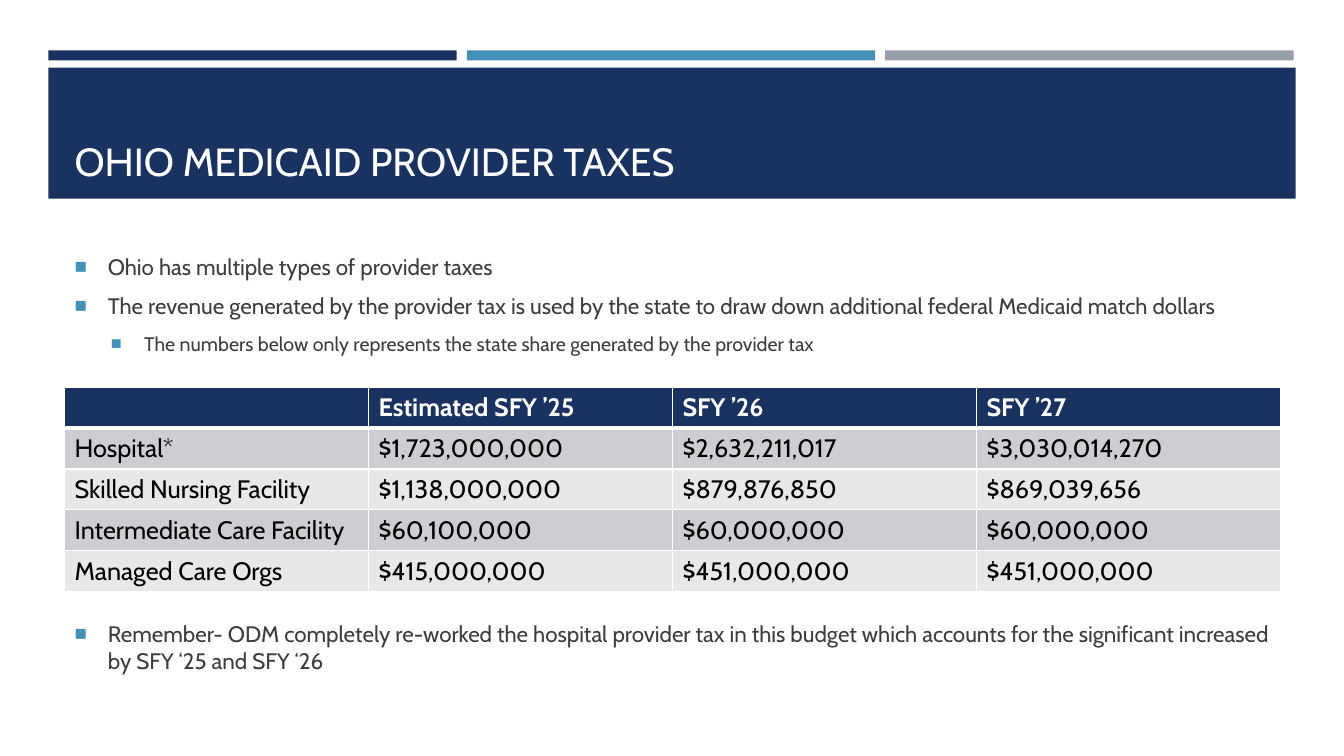
from lxml import etree
from pptx import Presentation
from pptx import util as u
from pptx.dml.color import RGBColor
from pptx.enum import shapes, text
from pptx.oxml import ns

PX = 9144
FONT = "Cabin"
COLORS = {
    "navy": "1A3260",
    "blue": "4590B8",
    "gray": "969FA7",
    "white": "FFFFFF",
    "body": "3D3D3D",
    "black": "000000",
    "band_dark": "CDCED2",
    "band_light": "E8E8EA",
}
TAXES = [
    ["", "Estimated SFY ’25", "SFY ’26", "SFY ’27"],
    ["Hospital*", "$1,723,000,000", "$2,632,211,017", "$3,030,014,270"],
    ["Skilled Nursing Facility", "$1,138,000,000", "$879,876,850", "$869,039,656"],
    ["Intermediate Care Facility", "$60,100,000", "$60,000,000", "$60,000,000"],
    ["Managed Care Orgs", "$415,000,000", "$451,000,000", "$451,000,000"],
]
INTRO = [
    (0, "Ohio has multiple types of provider taxes"),
    (0, "The revenue generated by the provider tax is used by the state to draw down "
        "additional federal Medicaid match dollars"),
    (1, "The numbers below only represents the state share generated by the provider tax"),
]
REMINDER = [
    (0, "Remember- ODM completely re-worked the hospital provider tax in this budget "
        "which accounts for the significant increased by SFY ‘25 and SFY ‘26"),
]


def rgb(name):
    return RGBColor.from_string(COLORS[name])


def apply(target, values):
    for name, value in values.items():
        setattr(target, name, value)


def place(shape, box):
    apply(shape, dict(zip(("left", "top", "width", "height"), (n * PX for n in box))))


def add_span(para, wording, size, color, bold=False):
    span = para.add_run()
    span.text = wording
    apply(span.font, {"name": FONT, "size": u.Pt(size), "bold": bold})
    span.font.color.rgb = rgb(color)


def add_bar(page, box, color):
    bar = page.shapes.add_shape(shapes.MSO_SHAPE.RECTANGLE, *(n * PX for n in box))
    bar.shadow.inherit = False
    bar.fill.solid()
    bar.fill.fore_color.rgb = rgb(color)
    bar.line.fill.background()


def add_header(page, box):
    left, top, width, height = box
    gap = 10
    bar_width = (width - 2 * gap) // 3
    for index, color in enumerate(("navy", "blue", "gray")):
        add_bar(page, (left + index * (bar_width + gap), top, bar_width, 10), color)
    add_bar(page, (left, top + 17, width, height - 17), "navy")


def fill_title(title, box, wording):
    place(title, box)
    apply(title.text_frame, {
        "word_wrap": True,
        "auto_size": text.MSO_AUTO_SIZE.NONE,
        "vertical_anchor": text.MSO_ANCHOR.BOTTOM,
    })
    para = title.text_frame.paragraphs[0]
    para.alignment = text.PP_ALIGN.LEFT
    add_span(para, wording, 28, "white")


def add_bullet(para, level):
    properties = para._p.get_or_add_pPr()
    properties.set("marL", str((33 + 36 * level) * PX))
    properties.set("indent", str(-33 * PX))
    color = etree.SubElement(properties, ns.qn("a:buClr"))
    etree.SubElement(color, ns.qn("a:srgbClr"), val=COLORS["blue"])
    etree.SubElement(properties, ns.qn("a:buSzPct"), val="92000")
    etree.SubElement(properties, ns.qn("a:buChar"), char="■")


def fill_list(body, box, items):
    place(body, box)
    frame = body.text_frame
    apply(frame, {
        "word_wrap": True,
        "auto_size": text.MSO_AUTO_SIZE.NONE,
        "vertical_anchor": text.MSO_ANCHOR.MIDDLE,
    })
    for index, (level, wording) in enumerate(items):
        para = frame.add_paragraph() if index else frame.paragraphs[0]
        size = 16 - 2 * level
        add_bullet(para, level)
        apply(para, {
            "level": level,
            "alignment": text.PP_ALIGN.LEFT,
            "space_before": u.Pt(size * 0.2),
            "space_after": u.Pt(6),
        })
        add_span(para, wording, size, "body")


def add_borders(cell, widths):
    properties = cell._tc.get_or_add_tcPr()
    for side, width in widths.items():
        line = etree.SubElement(properties, ns.qn(f"a:ln{side}"), w=str(u.Pt(width)))
        fill = etree.SubElement(line, ns.qn("a:solidFill"))
        etree.SubElement(fill, ns.qn("a:srgbClr"), val=COLORS["white"])


def add_tax_table(page, box, rows):
    frame = page.shapes.add_table(len(rows), len(rows[0]), *(n * PX for n in box))
    table = frame.table
    for column in table.columns:
        column.width = box[2] * PX // len(rows[0])
    for row_index, values in enumerate(rows):
        table.rows[row_index].height = box[3] * PX // len(rows)
        header = row_index == 0
        band = "navy" if header else ("band_light", "band_dark")[row_index % 2]
        widths = {"L": 1, "R": 1, "T": 3 if row_index == 1 else 1, "B": 3 if header else 1}
        for column_index, wording in enumerate(values):
            cell = table.cell(row_index, column_index)
            add_borders(cell, widths)
            cell.fill.solid()
            cell.fill.fore_color.rgb = rgb(band)
            if wording:
                para = cell.text_frame.paragraphs[0]
                add_span(para, wording, 18, "white" if header else "black", header)


def build_tax_slide(deck):
    page = deck.slides.add_slide(deck.slide_layouts.get_by_name("Two Content"))
    title, intro, reminder = list(page.placeholders)
    add_header(page, (48, 50, 1237, 147))
    for shape in (title, intro, reminder):
        page.shapes._spTree.append(shape._element)
    fill_title(title, (64, 77, 1206, 111), "OHIO MEDICAID PROVIDER TAXES")
    add_tax_table(page, (64, 384, 1206, 203), TAXES)
    fill_list(intro, (64, 238, 1206, 127), INTRO)
    fill_list(reminder, (64, 578, 1206, 127), REMINDER)


def main():
    deck = Presentation()
    apply(deck, {"slide_width": 1333 * PX, "slide_height": 750 * PX})
    build_tax_slide(deck)
    deck.save("out.pptx")


if __name__ == "__main__":
    main()
